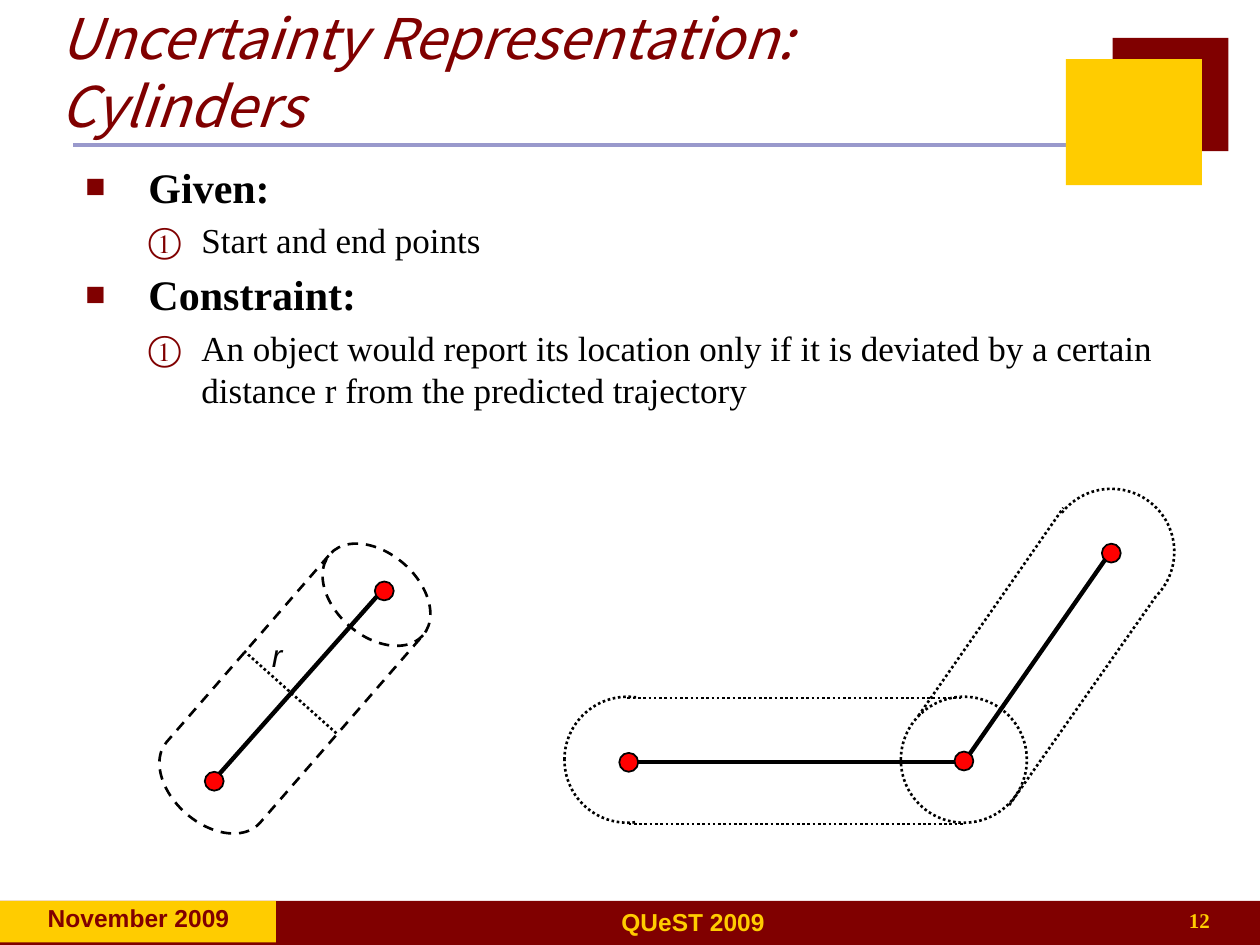
from lxml.etree import SubElement
from pptx import Presentation
from pptx.dml.color import RGBColor
from pptx.enum.dml import MSO_LINE as Dash
from pptx.enum.shapes import MSO_CONNECTOR as Conn, MSO_SHAPE as Kind
from pptx.enum.text import MSO_ANCHOR as Anchor, PP_ALIGN as Align
from pptx.oxml.ns import qn
from pptx.util import Inches, Pt

MAROON = RGBColor(0x80, 0x00, 0x00)
GOLD = RGBColor(0xFF, 0xCC, 0x00)
LILAC = RGBColor(0x99, 0x99, 0xCC)
BLACK = RGBColor(0x00, 0x00, 0x00)
WHITE = RGBColor(0xFF, 0xFF, 0xFF)
RED = RGBColor(0xFF, 0x00, 0x00)
SERIF = "Times New Roman"
SANS = "Arial"
DOT = 0.15
RING = 1


def add_shape(slide, kind, box, fill=None, width=None, dash=None, turn=0):
    shape = slide.shapes.add_shape(kind, *map(Inches, box))
    shape.shadow.inherit = False
    shape.rotation = turn
    if fill is None:
        shape.fill.background()
    else:
        shape.fill.solid()
        shape.fill.fore_color.rgb = fill
    if width is None:
        shape.line.fill.background()
    else:
        style_line(shape.line, BLACK, width, dash)
    return shape


def style_line(line, color, width, dash):
    line.color.rgb = color
    line.width = Pt(width)
    if dash is not None:
        line.dash_style = dash


def add_line(slide, ends, width, color=BLACK, dash=None):
    line = slide.shapes.add_connector(Conn.STRAIGHT, *map(Inches, ends))
    style_line(line.line, color, width, dash)
    SubElement(line._element.spPr, qn("a:effectLst"))


def add_ring(slide, x, y):
    box = (x - RING / 2, y - RING / 2, RING, RING)
    add_shape(slide, Kind.OVAL, box, None, 1.5, Dash.ROUND_DOT)


def add_dot(slide, x, y):
    box = (x - DOT / 2, y - DOT / 2, DOT, DOT)
    add_shape(slide, Kind.OVAL, box, RED, 1)


def add_run(par, text, size, color, face, bold=False, slant=False):
    run = par.add_run()
    run.text = text
    font = run.font
    font.size = Pt(size)
    font.name = face
    font.bold = bold
    font.italic = slant
    font.color.rgb = color
    props = run._r.get_or_add_rPr()
    SubElement(props, qn("a:ea")).set("typeface", face)


def add_frame(slide, box, anchor=Anchor.TOP):
    frame = slide.shapes.add_textbox(*map(Inches, box)).text_frame
    frame.word_wrap = True
    frame.vertical_anchor = anchor
    return frame


def add_label(slide, box, text, size, color, face, align=Align.LEFT,
              anchor=Anchor.TOP, bold=False, slant=False):
    par = add_frame(slide, box, anchor).paragraphs[0]
    par.alignment = align
    add_run(par, text, size, color, face, bold, slant)


def set_bullet(par, level):
    left, hang = (0.92, 0.42) if level else (0.5, 0.5)
    props = par._p.get_or_add_pPr()
    props.set("marL", str(Inches(left)))
    props.set("indent", str(-Inches(hang)))
    color = SubElement(props, qn("a:buClr"))
    SubElement(color, qn("a:srgbClr")).set("val", str(MAROON))
    if level:
        SubElement(props, qn("a:buAutoNum")).set("type", "circleNumDbPlain")
    else:
        SubElement(props, qn("a:buSzPct")).set("val", "80000")
        SubElement(props, qn("a:buFont")).set("typeface", SANS)
        SubElement(props, qn("a:buChar")).set("char", "■")


def add_body(slide):
    items = [
        (0, "Given:"),
        (1, "Start and end points"),
        (0, "Constraint:"),
        (1, "An object would report its location only if it is deviated by "
            "a certain distance r from the predicted trajectory"),
    ]
    frame = add_frame(slide, (0.58, 1.23, 8.92, 2.53))
    for i, (level, text) in enumerate(items):
        par = frame.paragraphs[0] if i == 0 else frame.add_paragraph()
        size = 20 if level else 24
        par.level = level
        set_bullet(par, level)
        if i:
            par.space_before = Pt(size * 0.2)
        add_run(par, text, size, BLACK, SERIF, bold=not level)


def add_decor(slide):
    add_line(slide, (0.58, 1.15, 8.5, 1.15), 2.25, LILAC)
    for box, fill in [
        ((0, 7.15, 10, 0.35), MAROON),
        ((0, 7.15, 2.19, 0.33), GOLD),
        ((8.83, 0.3, 0.92, 0.9), MAROON),
        ((8.46, 0.47, 1.08, 1), GOLD),
    ]:
        add_shape(slide, Kind.RECTANGLE, box, fill)
    add_label(slide, (1.89, 7.15, 7.22, 0.33), "QUeST 2009", 14, GOLD, SANS,
              Align.CENTER, bold=True)
    add_label(slide, (0.12, 7.12, 1.96, 0.33), "November 2009", 14, MAROON,
              SANS, Align.CENTER, bold=True)
    add_label(slide, (7.62, 7.15, 2.08, 0.33), "12", 12, GOLD, SERIF,
              Align.RIGHT, bold=True)


def add_path(slide):
    add_ring(slide, 8.82, 4.38)
    add_shape(slide, Kind.RECTANGLE, (7.95, 4, 1.05, 1.65), WHITE, turn=312)
    add_ring(slide, 4.98, 6.03)
    add_shape(slide, Kind.RECTANGLE, (5.05, 5.3, 1.05, 1.65), WHITE)
    add_ring(slide, 7.65, 6.03)
    add_line(slide, (4.97, 6.05, 7.65, 6.05), 2.5)
    add_line(slide, (7.65, 6.05, 8.8, 4.4), 2.5)
    for ends in [
        (4.98, 5.54, 7.65, 5.54),
        (4.99, 6.54, 7.66, 6.54),
        (7.29, 5.68, 8.44, 4.03),
        (8.01, 6.39, 9.17, 4.74),
    ]:
        add_line(slide, ends, 1.5, dash=Dash.ROUND_DOT)
    for x, y in [(4.99, 6.05), (7.65, 6.04), (8.82, 4.39)]:
        add_dot(slide, x, y)


def add_tube(slide):
    can = add_shape(slide, Kind.CAN, (1.85, 4.15, 0.98, 2.63), None, 1.5,
                    Dash.DASH, 41)
    can.adjustments[0] = 0.67
    add_line(slide, (3.03, 4.69, 1.69, 6.2), 2.5)
    for x, y in [(3.05, 4.69), (1.7, 6.2)]:
        add_dot(slide, x, y)
    add_line(slide, (2.67, 5.82, 1.93, 5.16), 1.5, dash=Dash.ROUND_DOT)
    add_label(slide, (2.06, 5, 0.45, 0.4), "r", 18, BLACK, SANS, slant=True)


def main():
    deck = Presentation()
    deck.slide_width, deck.slide_height = Inches(10), Inches(7.5)
    slide = deck.slides.add_slide(deck.slide_layouts[6])
    add_decor(slide)
    add_path(slide)
    add_body(slide)
    add_tube(slide)
    add_label(slide, (0.38, 0.06, 7.9, 1.01),
              "Uncertainty Representation: Cylinders", 32, MAROON,
              "Noto Sans CJK KR", anchor=Anchor.MIDDLE, slant=True)
    deck.save("out.pptx")


if __name__ == "__main__":
    main()
